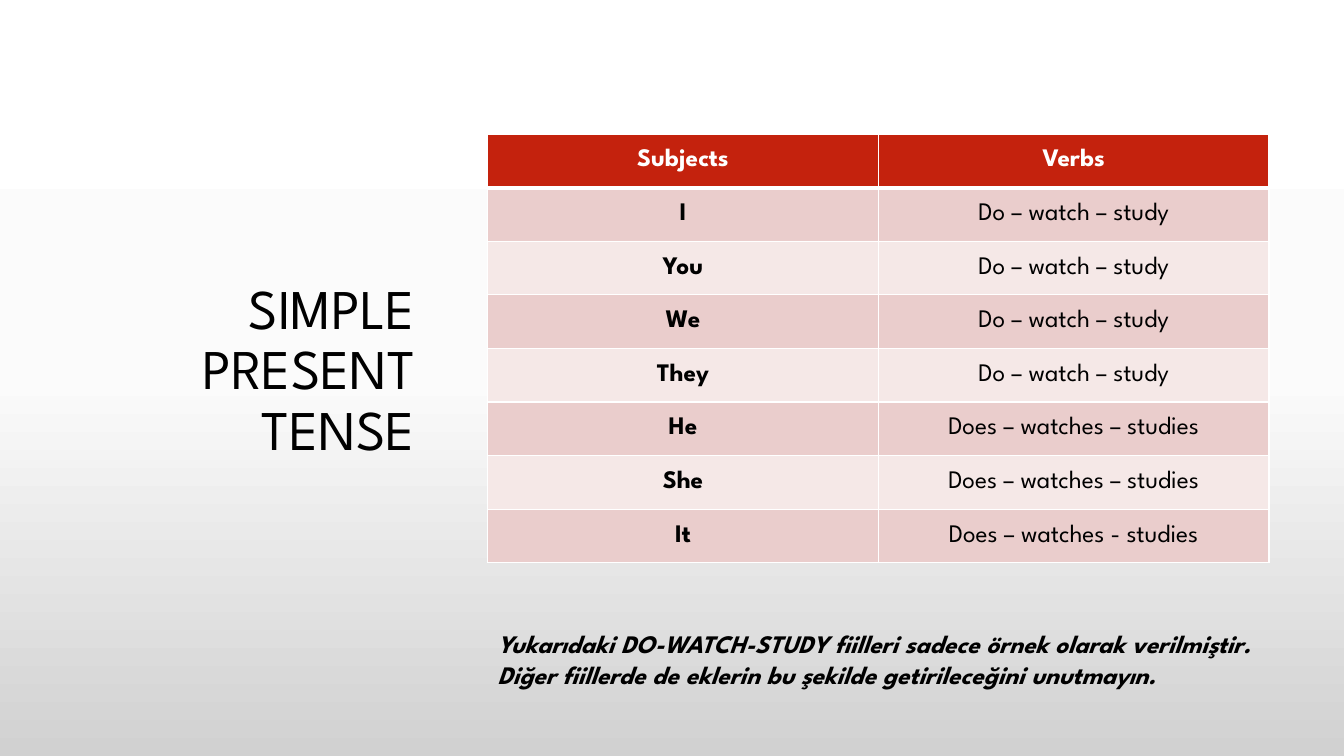
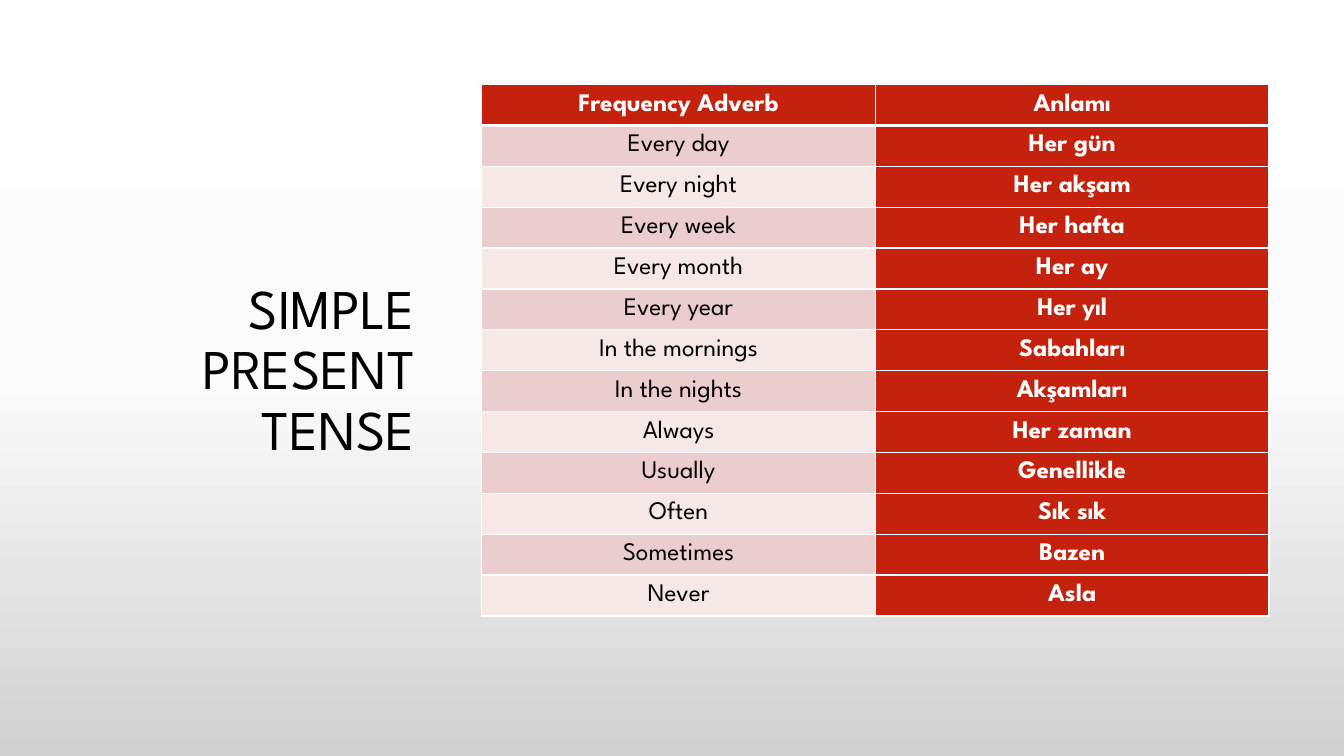
import copy

import pptx
import pptx.dml.color
import pptx.enum.text
import pptx.oxml
import pptx.oxml.ns
import pptx.util

Cm = pptx.util.Cm
Pt = pptx.util.Pt
RGBColor = pptx.dml.color.RGBColor
PP_ALIGN = pptx.enum.text.PP_ALIGN
MSO_ANCHOR = pptx.enum.text.MSO_ANCHOR
qn = pptx.oxml.ns.qn

BLACK = RGBColor(0x00, 0x00, 0x00)
WHITE = RGBColor(0xFF, 0xFF, 0xFF)
RED = RGBColor(0xC4, 0x22, 0x0D)
BANDS = [RGBColor(0xEA, 0xCD, 0xCC), RGBColor(0xF5, 0xE8, 0xE7)]
BACKDROP = [(0, WHITE), (0.5, RGBColor(0xFB, 0xFB, 0xFB)), (1, RGBColor(0xD1, 0xD1, 0xD1))]
FONT = "League Spartan"
TITLE = "SIMPLE PRESENT TENSE"
TABLE_RIGHT = Cm(31.98)

BASE = "Do – watch – study"
THIRD = "Does – watches – studies"
TABLES = [
    {
        "left": Cm(12.29), "top": Cm(3.38), "row_height": Cm(1.35),
        "bold_column": 0, "red_column": None,
        "rows": [
            ("Subjects", "Verbs"),
            ("I", BASE),
            ("You", BASE),
            ("We", BASE),
            ("They", BASE),
            ("He", THIRD),
            ("She", THIRD),
            ("It", "Does – watches - studies"),
        ],
        "note": [
            "Yukarıdaki DO-WATCH-STUDY fiilleri sadece örnek olarak verilmiştir.",
            "Diğer fiillerde de eklerin bu şekilde getirileceğini unutmayın.",
        ],
    },
    {
        "left": Cm(12.14), "top": Cm(2.13), "row_height": Cm(1.03),
        "bold_column": 1, "red_column": 1,
        "rows": [
            ("Frequency Adverb", "Anlamı"),
            ("Every day", "Her gün"),
            ("Every night", "Her akşam"),
            ("Every week", "Her hafta"),
            ("Every month", "Her ay"),
            ("Every year", "Her yıl"),
            ("In the mornings", "Sabahları"),
            ("In the nights", "Akşamları"),
            ("Always", "Her zaman"),
            ("Usually", "Genellikle"),
            ("Often", "Sık sık"),
            ("Sometimes", "Bazen"),
            ("Never", "Asla"),
        ],
        "note": [],
    },
]


def write(frame, lines, align, color, **font_format):
    """Fill a text frame with one paragraph per line, all in one style."""
    frame.word_wrap = True
    for index, line in enumerate(lines):
        para = frame.add_paragraph() if index else frame.paragraphs[0]
        para.alignment = align
        span = para.add_run()
        span.text = line
        span.font.color.rgb = color
        for name, value in {"name": FONT, "size": Pt(18), **font_format}.items():
            setattr(span.font, name, value)


def add_borders(cell, widths):
    """Draw white cell edges; widths maps an edge letter to points."""
    for edge, width in widths.items():
        line = pptx.oxml.parse_xml(
            f'<a:ln{edge} {pptx.oxml.ns.nsdecls("a")} w="{Pt(width)}">'
            f'<a:solidFill><a:srgbClr val="{WHITE}"/></a:solidFill></a:ln{edge}>'
        )
        cell._tc.get_or_add_tcPr().append(line)


deck = pptx.Presentation()
deck.slide_width = Cm(33.87)
deck.slide_height = Cm(19.05)

# Every slide inherits the gradient of the master
master = deck.slide_master
backdrop = master.background.fill
backdrop.gradient()
backdrop.gradient_angle = 270
stop_list = master.element.find(".//" + qn("a:gsLst"))
stop_list.insert(1, copy.deepcopy(stop_list[0]))
for stop, (position, color) in zip(backdrop.gradient_stops, BACKDROP):
    stop.position = position
    stop.color.rgb = color

for content in TABLES:
    page = deck.slides.add_slide(deck.slide_layouts[6])

    title = page.shapes.add_textbox(Cm(1.9), Cm(2.13), Cm(8.81), Cm(14.48))
    title.text_frame.vertical_anchor = MSO_ANCHOR.MIDDLE
    write(title.text_frame, [TITLE], PP_ALIGN.RIGHT, BLACK, size=Pt(40))
    title.text_frame.paragraphs[0].line_spacing = 0.9

    rows = content["rows"]
    table = page.shapes.add_table(
        len(rows), 2, content["left"], content["top"],
        TABLE_RIGHT - content["left"], content["row_height"] * len(rows),
    ).table
    table.horz_banding = False
    for row_index, row in enumerate(rows):
        for column_index, text in enumerate(row):
            cell = table.cell(row_index, column_index)
            header = row_index == 0
            red = header or column_index == content["red_column"]
            add_borders(cell, {
                "L": 1, "R": 1,
                "T": 3 if row_index == 1 else 1,
                "B": 3 if header else 1,
            })
            cell.fill.solid()
            cell.fill.fore_color.rgb = RED if red else BANDS[(row_index - 1) % 2]
            cell.vertical_anchor = MSO_ANCHOR.MIDDLE
            write(
                cell.text_frame, [text], PP_ALIGN.CENTER, WHITE if red else BLACK,
                bold=header or column_index == content["bold_column"],
            )

    if content["note"]:
        note = page.shapes.add_textbox(content["left"], Cm(15.72), Cm(21.29), Cm(1.8))
        write(note.text_frame, content["note"], PP_ALIGN.LEFT, BLACK, bold=True, italic=True)

deck.save("out.pptx")
